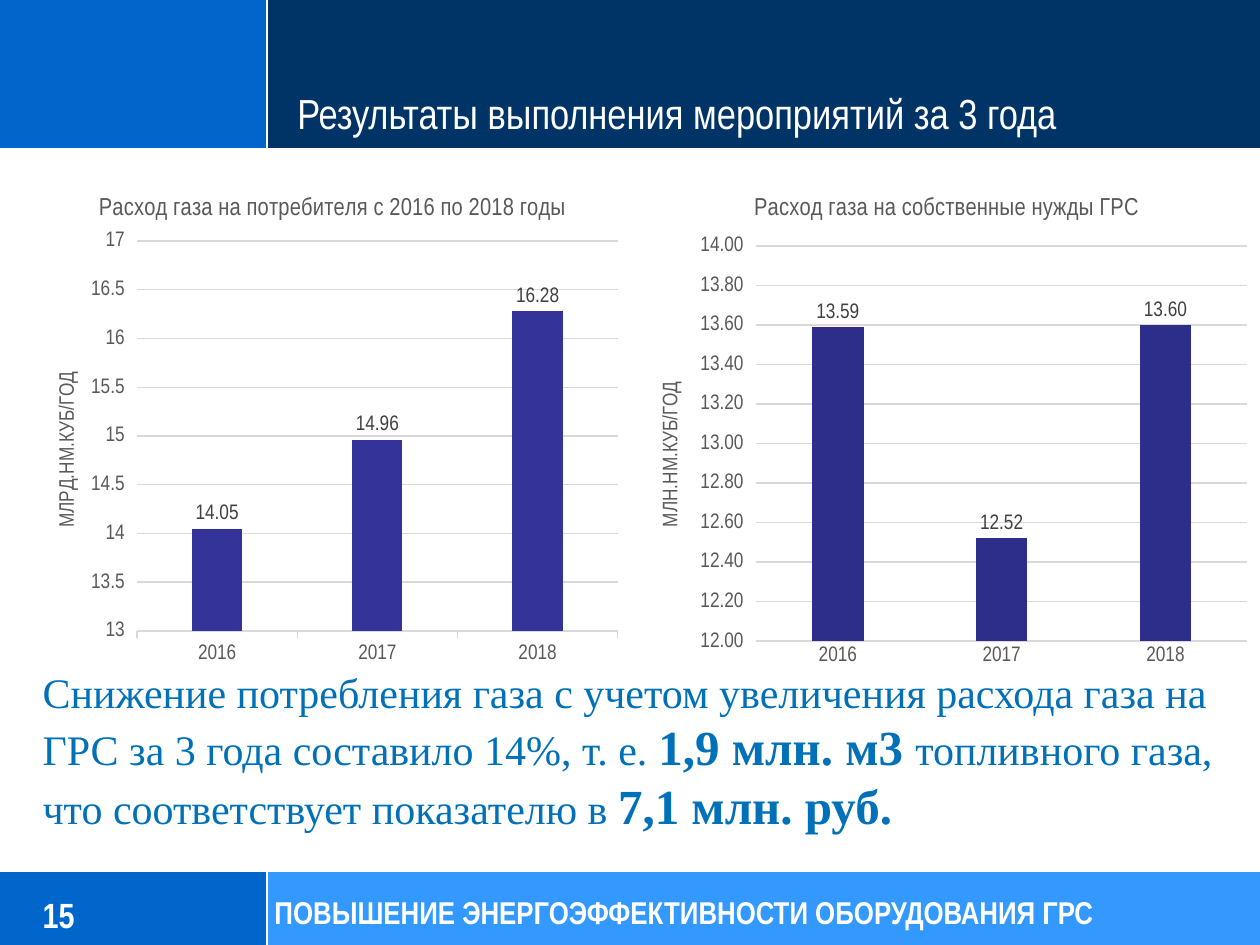
from lxml import etree
from pptx import Presentation
from pptx.chart.data import CategoryChartData as Data
from pptx.dml.color import RGBColor
from pptx.enum.chart import XL_CHART_TYPE as Kind, XL_LABEL_POSITION as Spot, XL_TICK_MARK as Tick
from pptx.enum.shapes import MSO_CONNECTOR as Link, MSO_SHAPE as Form
from pptx.enum.text import MSO_ANCHOR as Anchor, MSO_AUTO_SIZE as Fit, PP_ALIGN as Align
from pptx.oxml.ns import qn
from pptx.util import Pt

FACE = "Arial Narrow"


def hue(code):
    return RGBColor.from_string(code)


def write(frame, runs, face=FACE, color="FFFFFF", bold=False, align=Align.LEFT, gap=None):
    para = frame.paragraphs[0]
    para.alignment = align
    if gap:
        para.line_spacing = gap
    for text, size, *strong in runs:
        run = para.add_run()
        run.text = text
        font = run.font
        font.name, font.size = face, Pt(size)
        font.bold = bold or bool(strong)
        font.color.rgb = hue(color)


deck = Presentation()
deck.slide_width, deck.slide_height = Pt(720), Pt(540)
slide = deck.slides.add_slide(deck.slide_layouts[5])
shapes = slide.shapes

split, head, foot = 152.64, 85, 497.5
bands = [
    (0, foot, split, 540 - foot, "0066CC"),
    (split, foot, 720 - split, 540 - foot, "3399FF"),
    (0, 0, split, head, "0066CC"),
    (split, 0, 720 - split, head, "003366"),
]
for x, y, w, h, color in bands:
    band = shapes.add_shape(Form.RECTANGLE, Pt(x), Pt(y), Pt(w), Pt(h))
    band.shadow.inherit = False
    band.fill.solid()
    band.fill.fore_color.rgb = hue(color)
    band.line.fill.background()

rules = [
    (split, foot, split, 540),
    (split, 0, split, head),
    (0, foot, 720, foot),
    (0, head, 720, head),
]
for ends in rules:
    rule = shapes.add_connector(Link.STRAIGHT, *[Pt(v) for v in ends])
    rule.line.color.rgb = hue("FFFFFF")
    rule.line.width = Pt(1.25)
    etree.SubElement(rule._element.spPr, qn("a:effectLst"))

title = shapes.title
title.left, title.top, title.width, title.height = Pt(170), Pt(0), Pt(550), Pt(79)
frame = title.text_frame
frame.margin_left = frame.margin_top = frame.margin_right = frame.margin_bottom = 0
frame.vertical_anchor = Anchor.BOTTOM
frame.word_wrap = True
frame.auto_size = Fit.NONE
write(frame, [("Результаты выполнения мероприятий за 3 года", 24)])
shapes._spTree.append(title._element)

charts = [
    dict(x=12.24, w=347.76, name="Расход газа на потребителя с 2016 по 2018 годы",
         unit="МЛРД.НМ.КУБ/ГОД", vals=(14.05, 14.96, 16.28), color="333399",
         low=13, high=17, step=0.5, form="General", tick=Tick.OUTSIDE,
         plot=(0.19, 0.14, 0.79, 0.77), top=(0.12, 0.04), side=(0.05, 0.39)),
    dict(x=360, w=360, name="Расход газа на собственные нужды ГРС",
         unit="МЛН.НМ.КУБ/ГОД", vals=(13.59, 12.52, 13.6), color="2D2D8A",
         low=12, high=14, step=0.2, form="0.00", tick=Tick.NONE,
         plot=(0.2, 0.15, 0.78, 0.78), top=(0.19, 0.04), side=(0.04, 0.41)),
]
for item in charts:
    data = Data(number_format="0.00")
    data.categories = ["2016", "2017", "2018"]
    data.add_series("Series 1", item["vals"])
    chart = shapes.add_chart(Kind.COLUMN_CLUSTERED, Pt(item["x"]), Pt(97.2),
                             Pt(item["w"]), Pt(289.44), data).chart
    chart.has_legend = False
    chart.font.name, chart.font.size = FACE, Pt(12)
    base, scale = chart.category_axis, chart.value_axis
    write(chart.chart_title.text_frame, [(item["name"], 14)], color="595959", align=Align.CENTER)
    write(scale.axis_title.text_frame, [(item["unit"], 12)], color="595959", align=Align.CENTER)

    scale.minimum_scale, scale.maximum_scale = item["low"], item["high"]
    scale.major_unit = item["step"]
    scale.tick_labels.number_format = item["form"]
    scale.tick_labels.number_format_is_linked = False
    scale.format.line.fill.background()
    base.major_tick_mark = item["tick"]
    for line in (base.format.line, scale.major_gridlines.format.line):
        line.color.rgb = hue("D9D9D9")
        line.width = Pt(0.75)

    plot = chart.plots[0]
    plot.gap_width, plot.overlap, plot.vary_by_categories = 219, -27, False
    bars = plot.series[0]
    bars.format.fill.solid()
    bars.format.fill.fore_color.rgb = hue(item["color"])
    tags = bars.data_labels
    tags.show_value, tags.position = True, Spot.OUTSIDE_END
    tags.number_format, tags.number_format_is_linked = "0.00", False
    for font, color in ((base.tick_labels.font, "595959"),
                        (scale.tick_labels.font, "595959"), (tags.font, "404040")):
        font.name, font.size = FACE, Pt(12)
        font.color.rgb = hue(color)

    root = chart._chartSpace
    root.xpath(".//c:valAx/c:title//a:bodyPr")[0].set("rot", "-5400000")
    for key, where, slot in (("plot", "c:chart/c:plotArea", 0), ("top", "c:chart/c:title", 1),
                             ("side", ".//c:valAx/c:title", 1)):
        part = root.xpath(where)[0]
        for old in part.findall(qn("c:layout")):
            part.remove(old)
        box = etree.Element(qn("c:layout"))
        part.insert(slot, box)
        spot = etree.SubElement(box, qn("c:manualLayout"))
        marks = [("xMode", "edge"), ("yMode", "edge"), *zip("xywh", item[key])]
        if key == "plot":
            marks.insert(0, ("layoutTarget", "inner"))
        for tag, val in marks:
            etree.SubElement(spot, qn("c:" + tag)).set("val", str(val))

claim = [
    ("Снижение потребления газа с учетом увеличения расхода газа на ГРС за 3 года составило 14%, т. е. ", 24),
    ("1,9 млн. м3 ", 28, True),
    ("топливного газа, что соответствует показателю в ", 24),
    ("7,1 млн. руб.", 28, True),
]
notes = [
    (17.28, 505.44, 121, 31, [("15", 20)], dict(bold=True, gap=1.07)),
    (149.76, 505.44, 556.56, 31, [("ПОВЫШЕНИЕ ЭНЕРГОЭФФЕКТИВНОСТИ ОБОРУДОВАНИЯ ГРС", 18)],
     dict(bold=True, gap=1.07)),
    (17.28, 377.28, 689, 104.4, claim, dict(face="Times New Roman", color="0071B9")),
]
for x, y, w, h, runs, style in notes:
    frame = shapes.add_textbox(Pt(x), Pt(y), Pt(w), Pt(h)).text_frame
    frame.word_wrap = True
    frame.auto_size = Fit.SHAPE_TO_FIT_TEXT
    write(frame, runs, **style)

deck.save("out.pptx")
